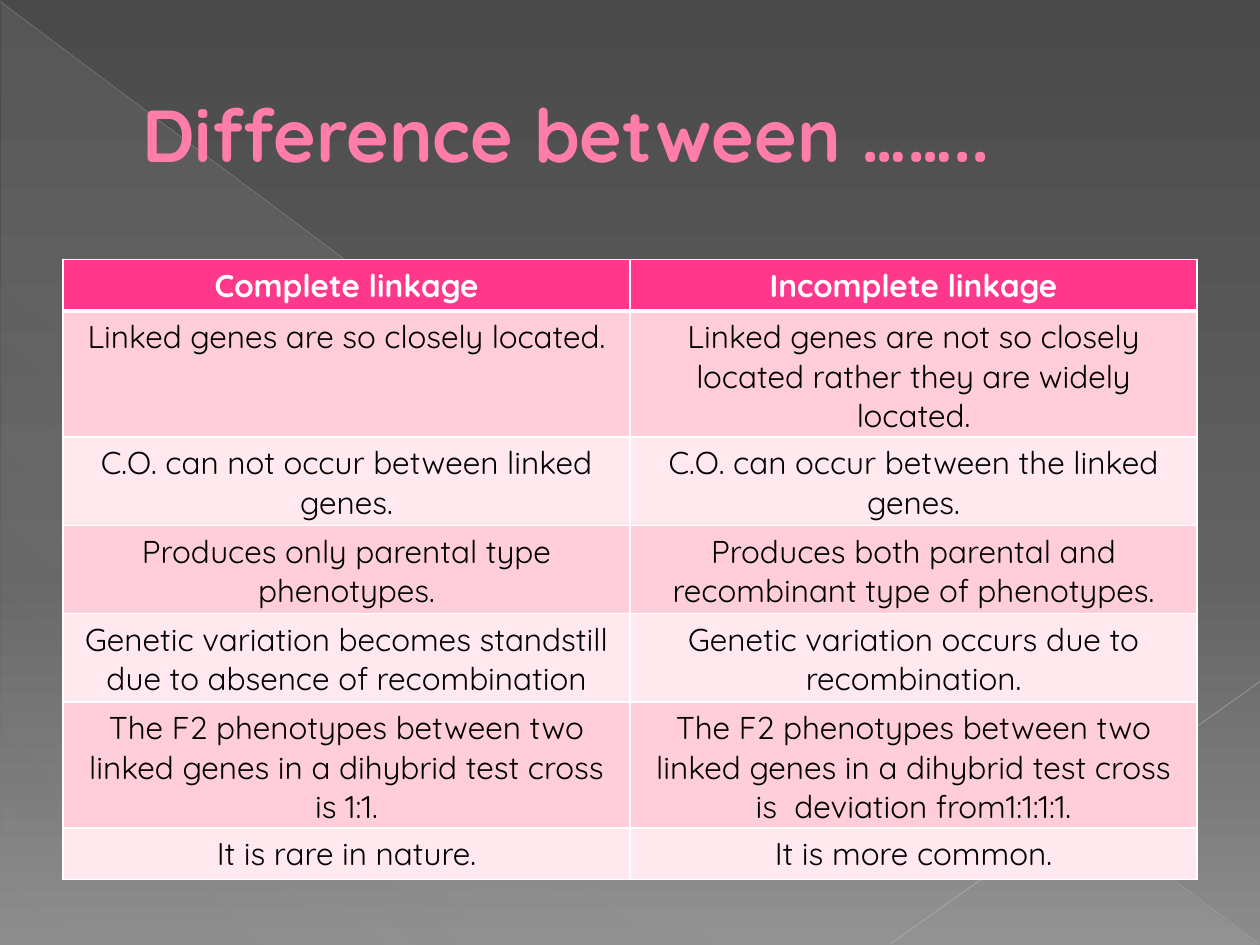
import lxml.etree
import pptx
import pptx.dml.color
import pptx.enum.shapes
import pptx.enum.text
import pptx.oxml.ns
import pptx.util

Cm = pptx.util.Cm
Pt = pptx.util.Pt
qn = pptx.oxml.ns.qn
SubElement = lxml.etree.SubElement


def color(value):
    return pptx.dml.color.RGBColor.from_string(value)


def set_gradient(fill, element, stops, angle):
    fill.gradient()
    gradient = element.find(".//" + qn("a:gradFill"))
    for child in list(gradient):
        gradient.remove(child)
    stop_list = SubElement(gradient, qn("a:gsLst"))
    for position, value, opacity in stops:
        stop = SubElement(stop_list, qn("a:gs"), pos=str(position * 1000))
        tint = SubElement(stop, qn("a:srgbClr"), val=value)
        if opacity < 100:
            SubElement(tint, qn("a:alpha"), val=str(opacity * 1000))
    SubElement(gradient, qn("a:lin"), ang=str(angle * 60000), scaled="0")


presentation = pptx.Presentation()
presentation.slide_width = Cm(25.4)
presentation.slide_height = Cm(19.05)
slide = presentation.slides.add_slide(presentation.slide_layouts[6])
set_gradient(
    slide.background.fill,
    slide.element,
    [(0, "4A4A4A", 100), (60, "626262", 100), (100, "8C8C8C", 100)],
    90,
)

triangle = slide.shapes.add_shape(
    pptx.enum.shapes.MSO_SHAPE.RIGHT_TRIANGLE, Cm(0.03), Cm(0.05), Cm(25.35), Cm(19)
)
triangle.shadow.inherit = False
triangle.line.fill.background()
set_gradient(
    triangle.fill,
    triangle.element,
    [(0, "D2D2D2", 10), (70, "D2D2D2", 8), (100, "D2D2D2", 1)],
    133,
)

diagonals = [
    (0, 0.03, 25.37, 19.02, "BFBFBF", 0.39, 35),
    (25.4, 13.74, 17.96, 19.02, "C6C6C6", 0.47, 45),
]
for start_x, start_y, end_x, end_y, value, width, opacity in diagonals:
    diagonal = slide.shapes.add_connector(
        pptx.enum.shapes.MSO_CONNECTOR.STRAIGHT,
        Cm(start_x), Cm(start_y), Cm(end_x), Cm(end_y),
    )
    diagonal.line.color.rgb = color(value)
    diagonal.line.width = Pt(width)
    tint = diagonal.element.find(".//" + qn("a:srgbClr"))
    SubElement(tint, qn("a:alpha"), val=str(opacity * 1000))
    SubElement(diagonal.element.spPr, qn("a:effectLst"))

title = slide.shapes.add_textbox(Cm(1.27), Cm(0.74), Cm(22.86), Cm(3.89))
title.text_frame.word_wrap = True
title.text_frame.vertical_anchor = pptx.enum.text.MSO_ANCHOR.MIDDLE
paragraph = title.text_frame.paragraphs[0]
paragraph._p.get_or_add_pPr().set("marL", str(Cm(1.35)))
run = paragraph.add_run()
run.text = "Difference between …….."
run.font.name = "Quicksand"
run.font.size = Pt(42)
run.font.bold = True
run.font.color.rgb = color("FF7DA7")
outline = lxml.etree.Element(qn("a:ln"), w=str(Pt(0.5)))
SubElement(SubElement(outline, qn("a:solidFill")), qn("a:srgbClr"), val="B12761")
run.font._element.insert(0, outline)

rows = [
    ("Complete linkage", "Incomplete linkage"),
    (
        "Linked genes are so closely located.",
        "Linked genes are not so closely located rather they are widely located.",
    ),
    (
        "C.O. can not occur between linked genes.",
        "C.O. can occur between the linked genes.",
    ),
    (
        "Produces only parental type phenotypes.",
        "Produces both parental and recombinant type of phenotypes.",
    ),
    (
        "Genetic variation becomes standstill due to absence of recombination",
        "Genetic variation occurs due to recombination.",
    ),
    (
        "The F2 phenotypes between two linked genes in a dihybrid test cross is 1:1.",
        "The F2 phenotypes between two linked genes in a dihybrid test cross is  deviation from1:1:1:1.",
    ),
    ("It is rare in nature.", "It is more common."),
]
table_frame = slide.shapes.add_table(
    len(rows), 2, Cm(1.27), Cm(5.23), Cm(22.86), Cm(13.23)
)
table = table_frame.table
for row_index, texts in enumerate(rows):
    table.rows[row_index].height = Cm(1.04)
    header = row_index == 0
    fill_color = "FF388C" if header else ("FFE8EE", "FFCEDA")[row_index % 2]
    for column_index, text in enumerate(texts):
        cell = table.cell(row_index, column_index)
        cell.text = text
        paragraph = cell.text_frame.paragraphs[0]
        paragraph.alignment = pptx.enum.text.PP_ALIGN.CENTER
        paragraph.font.name = "Quicksand"
        paragraph.font.size = Pt(18)
        paragraph.font.bold = header
        paragraph.font.color.rgb = color("FFFFFF" if header else "000000")
        properties = cell._tc.get_or_add_tcPr()
        for side in "LRTB":
            thick = (row_index, side) in [(0, "B"), (1, "T")]
            border = SubElement(
                properties, qn("a:ln" + side), w=str(Pt(3 if thick else 1))
            )
            border_fill = SubElement(border, qn("a:solidFill"))
            SubElement(border_fill, qn("a:srgbClr"), val="FFFFFF")
        cell.fill.solid()
        cell.fill.fore_color.rgb = color(fill_color)
table_frame.height = Cm(13.23)

presentation.save("out.pptx")
